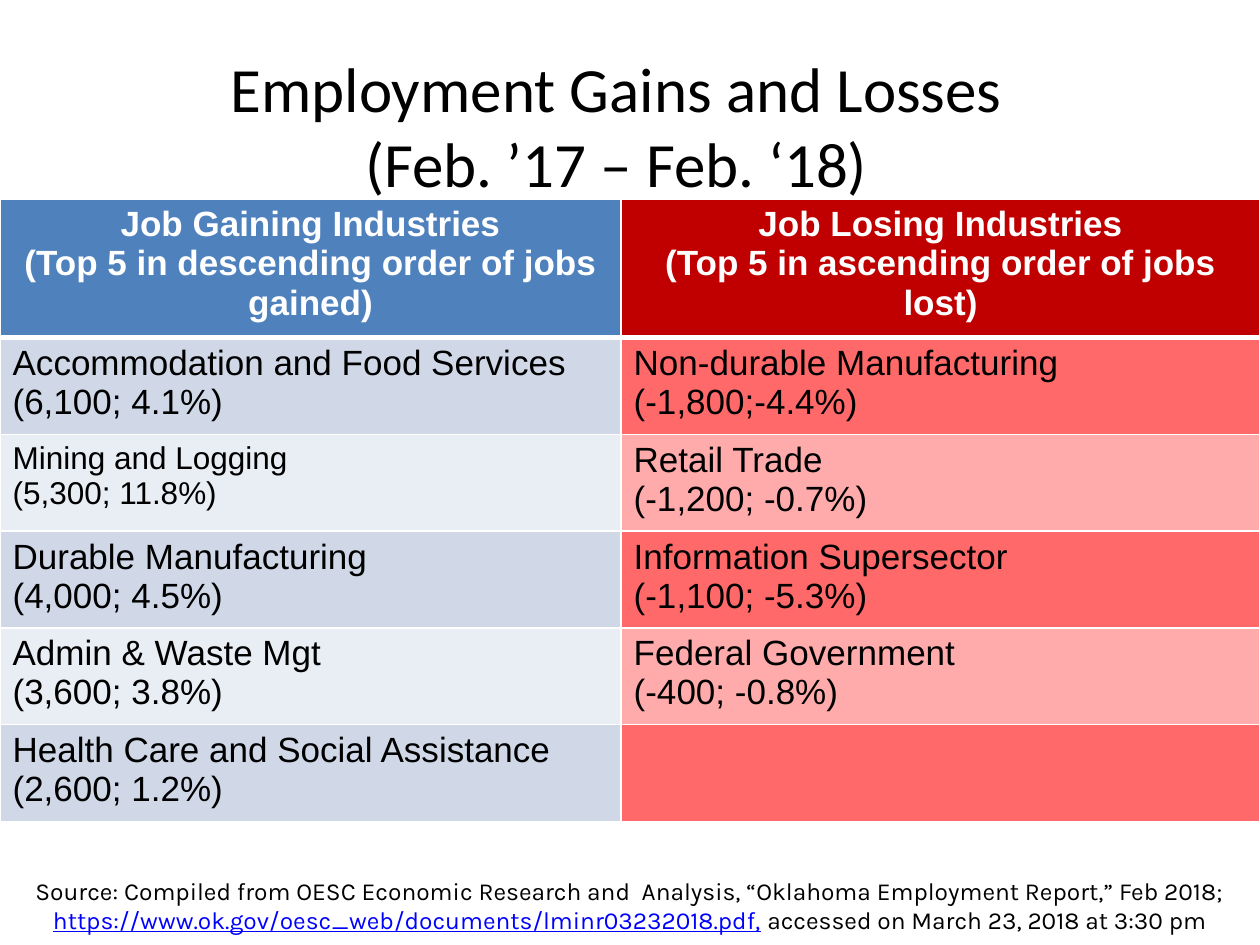
import pptx
import pptx.dml.color
import pptx.enum.text
import pptx.oxml
import pptx.oxml.ns
import pptx.util
from pptx.util import Cm

CENTER = pptx.enum.text.PP_ALIGN.CENTER
LEFT = pptx.enum.text.PP_ALIGN.LEFT


def color(hex_string):
    return pptx.dml.color.RGBColor.from_string(hex_string)


def add_run(paragraph, text, font_name, size, hex_string, bold=False):
    run = paragraph.add_run()
    run.text = text
    run.font.name = font_name
    run.font.size = pptx.util.Pt(size)
    run.font.bold = bold
    run.font.color.rgb = color(hex_string)
    return run


presentation = pptx.Presentation()
presentation.slide_width = Cm(25.4)
presentation.slide_height = Cm(19.05)
slide = presentation.slides.add_slide(presentation.slide_layouts[6])

# Title, kept above the table by a deep bottom margin
title = slide.shapes.add_textbox(Cm(1.17), Cm(1.7), Cm(22.86), Cm(3.18))
title_frame = title.text_frame
title_frame.word_wrap = True
title_frame.vertical_anchor = pptx.enum.text.MSO_ANCHOR.MIDDLE
title_frame.margin_bottom = Cm(1.68)
title_frame.margin_right = Cm(0.6)
paragraph = title_frame.paragraphs[0]
paragraph.alignment = CENTER
add_run(paragraph, "Employment Gains and Losses", "Calibri", 36, "000000")
paragraph.add_line_break()
add_run(paragraph, "(Feb. ’17 – Feb. ‘18)", "Calibri", 36, "000000")

# Table content: one pair of cells per row, each cell a list of lines
rows = [
    (["Job Gaining Industries", "(Top 5 in descending order of jobs gained)"],
     ["Job Losing Industries", "(Top 5 in ascending order of jobs lost)"]),
    (["Accommodation and Food Services", "(6,100; 4.1%)"],
     ["Non-durable Manufacturing", "(-1,800;-4.4%)"]),
    (["Mining and Logging", "(5,300; 11.8%)"],
     ["Retail Trade", "(-1,200; -0.7%)"]),
    (["Durable Manufacturing", "(4,000; 4.5%)"],
     ["Information Supersector", "(-1,100; -5.3%)"]),
    (["Admin & Waste Mgt", "(3,600; 3.8%)"],
     ["Federal Government", "(-400; -0.8%)"]),
    (["Health Care and Social Assistance", "(2,600; 1.2%)"], []),
]
header_fills = ["4F81BD", "C00000"]
band_fills = [["E9EDF4", "FFABAB"], ["D0D8E8", "FF6969"]]

# Table grid
frame = slide.shapes.add_table(len(rows), 2, Cm(0), Cm(4.01), Cm(25.4), Cm(12.52))
table = frame.table
table.first_row = False
table.horz_banding = False
for column, width in zip(table.columns, [12.52, 12.88]):
    column.width = Cm(width)
for row_index, row in enumerate(table.rows):
    row.height = Cm(1.95 if row_index else 2.79)

# Table cells
for row_index, pair in enumerate(rows):
    is_header = row_index == 0
    fills = header_fills if is_header else band_fills[row_index % 2]
    for column_index, lines in enumerate(pair):
        cell = table.cell(row_index, column_index)

        # White borders, thicker under the header
        thick_side = {0: "B", 1: "T"}.get(row_index)
        for side in "LRTB":
            width = pptx.util.Pt(3 if side == thick_side else 1)
            cell._tc.get_or_add_tcPr().append(pptx.oxml.parse_xml(
                f'<a:ln{side} {pptx.oxml.ns.nsdecls("a")} w="{width}"><a:solidFill>'
                f'<a:srgbClr val="FFFFFF"/></a:solidFill></a:ln{side}>'))
        cell.fill.solid()
        cell.fill.fore_color.rgb = color(fills[column_index])

        size = 18 if lines and lines[0] == "Mining and Logging" else 20
        for line_index, line in enumerate(lines):
            if line_index:
                paragraph = cell.text_frame.add_paragraph()
            else:
                paragraph = cell.text_frame.paragraphs[0]
            paragraph.alignment = CENTER if is_header else LEFT
            add_run(paragraph, line, "Arial", size,
                    "FFFFFF" if is_header else "000000", is_header)

# Source note
source = slide.shapes.add_textbox(Cm(0), Cm(17.53), Cm(25.4), Cm(1.45))
source.text_frame.word_wrap = True
paragraph = source.text_frame.paragraphs[0]
paragraph.alignment = CENTER
add_run(paragraph, "Source: Compiled from OESC Economic Research and  Analysis, "
        "“Oklahoma Employment Report,” Feb 2018; ", "Karla", 14, "000000")
address = add_run(paragraph, "https://www.ok.gov/oesc_web/documents/lminr03232018.pdf,",
                  "Karla", 14, "0000FF")
address.font.underline = True
add_run(paragraph, " accessed on March 23, 2018 at 3:30 pm", "Karla", 14, "000000")

presentation.save("out.pptx")
